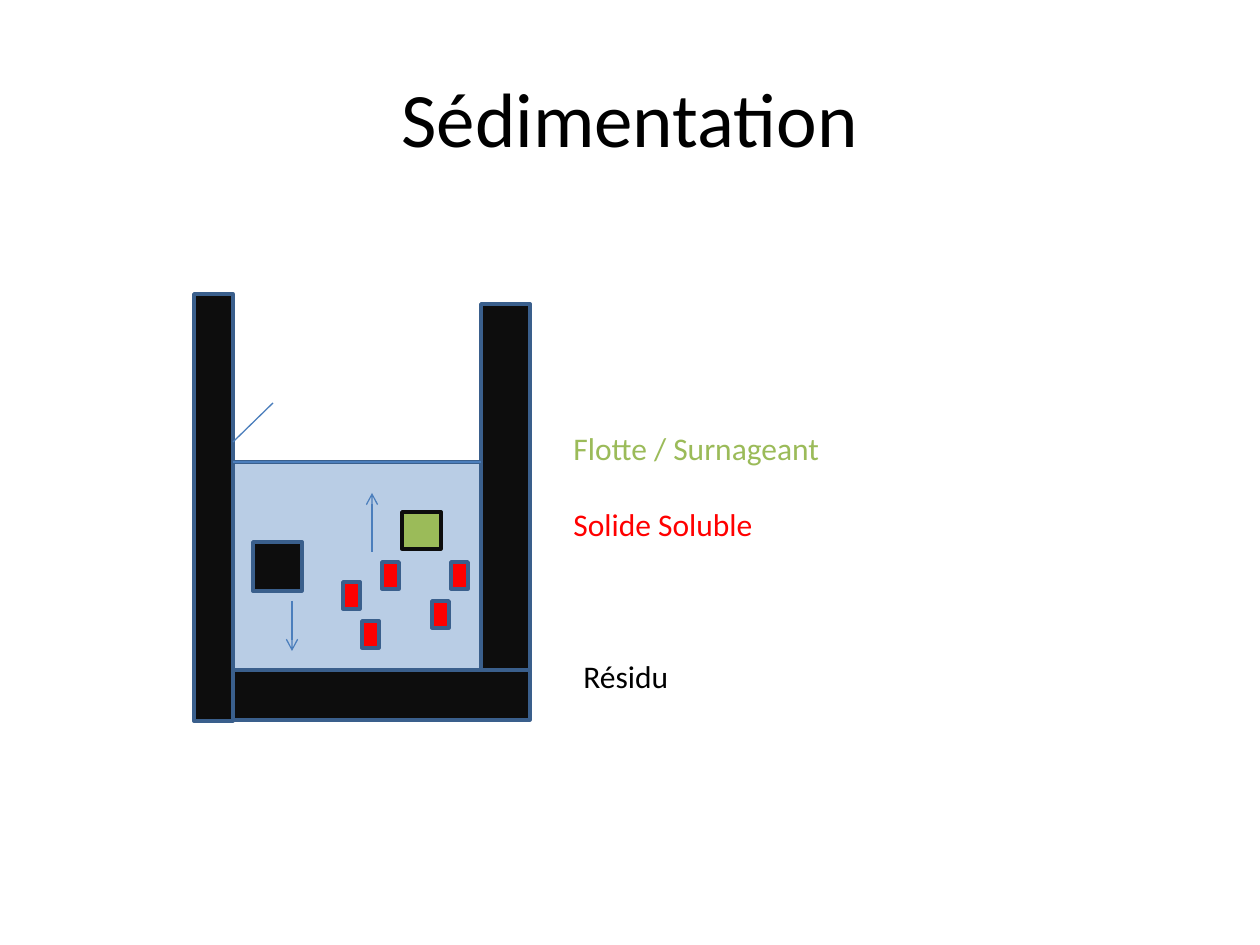
from lxml.etree import SubElement
from pptx import Presentation
from pptx.dml.color import RGBColor
from pptx.enum.shapes import MSO_CONNECTOR, MSO_SHAPE
from pptx.enum.text import MSO_ANCHOR, PP_ALIGN
from pptx.oxml.ns import qn
from pptx.util import Emu, Pt

PX = 914400 / 126  # EMU in one px

THEME = {
    "font": "Calibri", "title_size": 44, "label_size": 18,
    "text": "000000", "solid": "0D0D0D", "water": "B9CDE5",
    "floating": "9BBB59", "soluble": "FF0000",
    "outline": "3A5F8C", "line": "4B7EBC",
    "outline_width": 2, "line_width": 0.75,
}


def px(*values):
    return [Emu(round(v * PX)) for v in values]


def write(p, text, size=THEME["label_size"], color="text", align=PP_ALIGN.LEFT, before=0):
    p.alignment = align
    p.space_before = Pt(before)
    r = p.add_run()
    r.text = text
    r.font.name = THEME["font"]
    r.font.size = Pt(size)
    r.font.color.rgb = RGBColor.from_string(THEME[color])


prs = Presentation()
prs.slide_width, prs.slide_height = px(1260, 945)
slide = prs.slides.add_slide(prs.slide_layouts[5])

# Title
title = slide.shapes.title
title.left, title.top, title.width, title.height = px(63, 38, 1134, 157)
title.text_frame.vertical_anchor = MSO_ANCHOR.MIDDLE
write(title.text_frame.paragraphs[0], "Sédimentation",
      size=THEME["title_size"], align=PP_ALIGN.CENTER)

# Water, vessel walls and particles: position, size, fill, outline
blocks = [
    (233, 462, 248, 208, "water", "outline"),
    (194, 294, 39, 427, "solid", "outline"),
    (233, 670, 297, 50, "solid", "outline"),
    (481, 304, 49, 366, "solid", "outline"),
    (253, 542, 49, 49, "solid", "outline"),
    (402, 512, 39, 37, "floating", "solid"),
]
grains = [(362, 621), (343, 582), (382, 562), (451, 562), (432, 601)]
blocks += [(x, y, 17, 27, "soluble", "outline") for x, y in grains]
for x, y, w, h, fill, outline in blocks:
    sp = slide.shapes.add_shape(MSO_SHAPE.RECTANGLE, *px(x, y, w, h))
    sp.shadow.inherit = False
    sp.fill.solid()
    sp.fill.fore_color.rgb = RGBColor.from_string(THEME[fill])
    sp.line.color.rgb = RGBColor.from_string(THEME[outline])
    sp.line.width = Pt(THEME["outline_width"])

# Lip, water surface, sinking and rising arrows: from, to, arrowhead
lines = [
    (233, 442, 273, 403, False),
    (233, 462, 481, 462, False),
    (292, 601, 292, 651, True),
    (372, 552, 372, 493, True),
]
for x1, y1, x2, y2, arrow in lines:
    cxn = slide.shapes.add_connector(MSO_CONNECTOR.STRAIGHT, *px(x1, y1, x2, y2))
    cxn.line.color.rgb = RGBColor.from_string(THEME["line"])
    cxn.line.width = Pt(THEME["line_width"])
    if arrow:
        SubElement(cxn.line._get_or_add_ln(), qn("a:tailEnd"), type="arrow")
    SubElement(cxn._element.spPr, qn("a:effectLst"))

# Labels: box, then text, colour and space before each paragraph
labels = [
    ((561, 423, 407, 165), [("Flotte / Surnageant", "floating", 0),
                            ("Solide Soluble", "soluble", 22)]),
    ((571, 651, 407, 50), [("Résidu", "text", 0)]),
]
for box, items in labels:
    tf = slide.shapes.add_textbox(*px(*box)).text_frame
    tf.word_wrap = True
    for i, (text, color, before) in enumerate(items):
        p = tf.add_paragraph() if i else tf.paragraphs[0]
        write(p, text, color=color, before=before)

prs.save("out.pptx")
